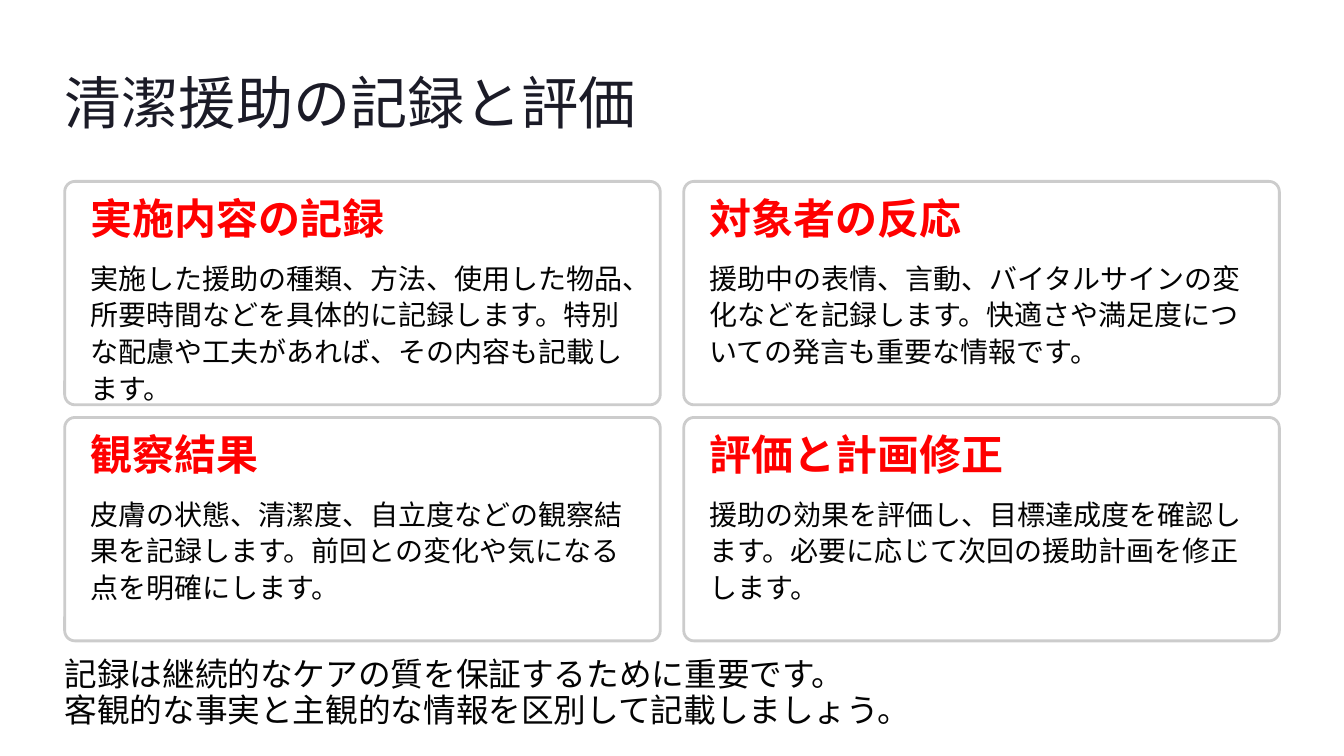
from lxml.etree import SubElement
from pptx import Presentation
from pptx.dml.color import RGBColor
from pptx.enum.shapes import MSO_SHAPE as Shape
from pptx.enum.text import MSO_ANCHOR as Anchor, PP_ALIGN as Align
from pptx.oxml.ns import qn
from pptx.util import Inches, Pt

# Content
TITLE = "清潔援助の記録と評価"
CARDS = [
    ("実施内容の記録", "実施した援助の種類、方法、使用した物品、所要時間などを具体的に記録します。特別な配慮や工夫があれば、その内容も記載します。"),
    ("対象者の反応", "援助中の表情、言動、バイタルサインの変化などを記録します。快適さや満足度についての発言も重要な情報です。"),
    ("観察結果", "皮膚の状態、清潔度、自立度などの観察結果を記録します。前回との変化や気になる点を明確にします。"),
    ("評価と計画修正", "援助の効果を評価し、目標達成度を確認します。必要に応じて次回の援助計画を修正します。"),
]
CLOSING = ["記録は継続的なケアの質を保証するために重要です。",
           "客観的な事実と主観的な情報を区別して記載しましょう。"]

# Style: font, size, line spacing, colour, bold
COLORS = {"title": "1B1B27", "heading": "FF0000", "body": "030303",
          "card": "FFFFFF", "border": "CCCCCC"}
STYLES = {
    "title": ("Inter", 49, 61.5, "title", False),
    "heading": ("Inter", 36, 30.5, "heading", True),
    "body": ("Karla", 24, 31.5, "body", False),
    "closing": ("Karla", 28, 31.5, "body", False),
}

# Grid, in inches
WIDTH, HEIGHT = 16, 9
MARGIN, GRID_TOP = 0.77, 2.16
COLUMNS, COLUMN_GAP, ROW_GAP = 2, 0.28, 0.15
CARD_WIDTH = (WIDTH - 2 * MARGIN - COLUMN_GAP) / COLUMNS
CARD_HEIGHT = 2.66
PADDING, BODY_OFFSET = 0.31, 0.91
HEADING_WIDTH = 3.75  # room for seven characters on one line


def color(name):
    return RGBColor.from_string(COLORS[name])


def add_text(page, lines, style, left, top, width, height, wrap=False):
    font, size, spacing, tint, bold = STYLES[style]
    box = page.shapes.add_textbox(*map(Inches, (left, top, width, height)))
    frame = box.text_frame
    frame.word_wrap = wrap
    frame.vertical_anchor = Anchor.TOP
    frame.margin_left = frame.margin_right = frame.margin_top = frame.margin_bottom = 0
    frame.text = "\n".join(lines)
    for para in frame.paragraphs:
        para.alignment = Align.LEFT
        para.line_spacing = Pt(spacing)
        para.font.name = font
        para.font.size = Pt(size)
        para.font.bold = bold
        para.font.color.rgb = color(tint)


def add_card(page, heading, body, left, top):
    card = page.shapes.add_shape(
        Shape.ROUNDED_RECTANGLE, *map(Inches, (left, top, CARD_WIDTH, CARD_HEIGHT)))
    card.adjustments[0] = 0.046
    card.shadow.inherit = False
    card.fill.solid()
    card.fill.fore_color.rgb = color("card")
    fill = card.fill.fore_color._xFill.find(qn("a:srgbClr"))
    SubElement(fill, qn("a:alpha"), val="95000")
    card.line.color.rgb = color("border")
    card.line.width = Pt(2.4)

    text_left = left + PADDING
    add_text(page, [heading], "heading", text_left, top + PADDING, HEADING_WIDTH, 0.43)
    add_text(page, [body], "body", text_left, top + BODY_OFFSET,
             CARD_WIDTH - 2 * PADDING, 1.32, wrap=True)


def main():
    deck = Presentation()
    deck.slide_width, deck.slide_height = Inches(WIDTH), Inches(HEIGHT)
    page = deck.slides.add_slide(deck.slide_layouts[6])

    # Title
    add_text(page, [TITLE], "title", MARGIN, 0.76, 6.87, 0.86)

    # Cards
    for index, (heading, body) in enumerate(CARDS):
        row, column = divmod(index, COLUMNS)
        add_card(page, heading, body,
                 MARGIN + column * (CARD_WIDTH + COLUMN_GAP),
                 GRID_TOP + row * (CARD_HEIGHT + ROW_GAP))

    # Closing lines
    add_text(page, CLOSING, "closing", MARGIN, 7.81, WIDTH - 2 * MARGIN, 0.44)

    deck.save("out.pptx")


if __name__ == "__main__":
    main()
